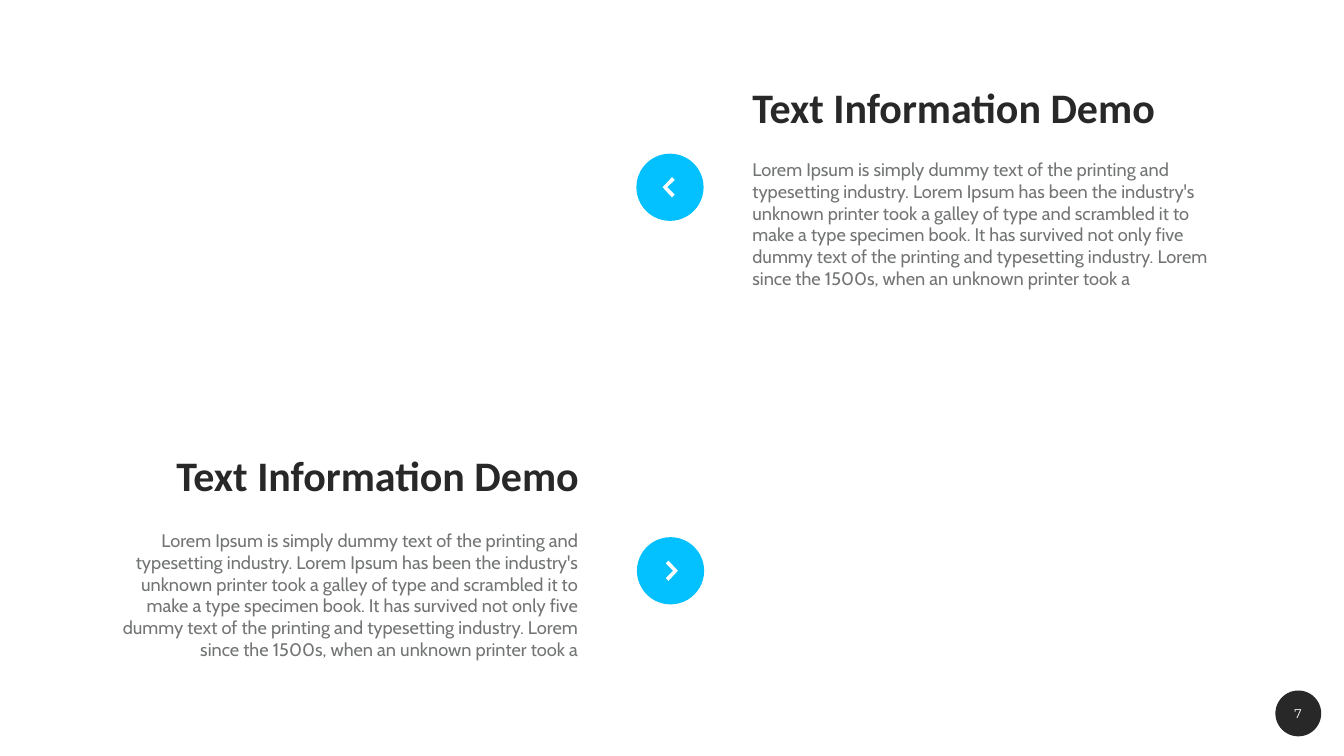
from dataclasses import dataclass
from pptx import Presentation
from pptx.dml.color import RGBColor as Rgb
from pptx.enum.shapes import MSO_SHAPE as Preset
from pptx.enum.text import MSO_AUTO_SIZE as Fit, PP_ALIGN as Align
from pptx.util import Inches, Pt

TITLE = "Text Information Demo"
BODY = (
    "Lorem Ipsum is simply dummy text of the printing and typesetting industry. "
    "Lorem Ipsum has been the industry's unknown printer took a galley of type and "
    "scrambled it to make a type specimen book. It has survived not only five dummy "
    "text of the printing and typesetting industry. Lorem since the 1500s, when an "
    "unknown printer took a"
)
PAGE_NUMBER = "7"

SECTIONS = [
    dict(title=TITLE, body=BODY, align=Align.LEFT, direction=-1,
         title_area=(55.83, 11.33, 41.88, 8.87),
         body_area=(55.83, 20.67, 34.42, 24.53),
         button_center=(49.85, 24.77)),
    dict(title=TITLE, body=BODY, align=Align.RIGHT, direction=1,
         title_area=(9.52, 59.93, 33.71, 11.6),
         body_area=(8.77, 69.73, 34.42, 23.33),
         button_center=(49.89, 75.5)),
]
BADGE_CENTER = (96.6, 94.37)
NUMBER_AREA = (95.35, 93.07, 2.47, 2.6)
BUTTON_SIZE, BADGE_SIZE = 5, 3.41
CHEVRON_SHIFT = 0.02
CHEVRON = [(-0.05, -0.15), (-0.09, -0.11), (0.02, 0),
           (-0.09, 0.11), (-0.05, 0.15), (0.09, 0)]


@dataclass(frozen=True)
class TextStyle:
    font: str
    size: float
    color: str
    bold: bool = False
    line_spacing: float = 1.0
    tracking: float = 0


@dataclass(frozen=True)
class Theme:
    accent: str = "03C0FE"
    dark: str = "282828"
    light: str = "FFFFFF"
    title: TextStyle = TextStyle("Calibri", 60, "282828", True, 0.9)
    body: TextStyle = TextStyle("Cabin", 26, "727574")
    number: TextStyle = TextStyle("Montserrat", 18, "FFFFFF", tracking=3.6)


theme = Theme()
deck = Presentation()
deck.slide_width, deck.slide_height = Inches(26.67), Inches(15)
slide = deck.slides.add_slide(deck.slide_layouts[6])
COLUMN, ROW = deck.slide_width / 100, deck.slide_height / 100


def place(column, row):
    return round(column * COLUMN), round(row * ROW)


def paint(shape, color):
    shape.shadow.inherit = False
    shape.fill.solid()
    shape.fill.fore_color.rgb = Rgb.from_string(color)
    shape.line.fill.background()


def add_disc(center, size, color):
    x, y = place(*center)
    diameter = round(size * COLUMN)
    disc = slide.shapes.add_shape(
        Preset.OVAL, x - diameter // 2, y - diameter // 2, diameter, diameter)
    paint(disc, color)


def add_text(text, area, style, align, fit=Fit.NONE):
    frame = slide.shapes.add_textbox(*place(*area[:2]), *place(*area[2:])).text_frame
    frame.word_wrap = True
    frame.auto_size = fit
    frame.margin_left = frame.margin_right = Inches(0.04)
    frame.margin_top = frame.margin_bottom = Inches(0.04)
    frame.text = text
    paragraph = frame.paragraphs[0]
    paragraph.alignment = align
    paragraph.line_spacing = style.line_spacing
    run = paragraph.runs[0]
    run.font.name = style.font
    run.font.size = Pt(style.size)
    run.font.bold = style.bold
    run.font.color.rgb = Rgb.from_string(style.color)
    if style.tracking:
        run._r.get_or_add_rPr().set("spc", str(round(style.tracking * 100)))


def add_chevron(center, direction):
    x, y = place(*center)
    diameter = BUTTON_SIZE * COLUMN
    corners = [(round(x + direction * (dx + CHEVRON_SHIFT) * diameter),
                round(y + dy * diameter)) for dx, dy in CHEVRON]
    outline = slide.shapes.build_freeform(*corners[0])
    outline.add_line_segments(corners[1:], close=True)
    paint(outline.convert_to_shape(), theme.light)


add_disc(BADGE_CENTER, BADGE_SIZE, theme.dark)
add_text(PAGE_NUMBER, NUMBER_AREA, theme.number, Align.CENTER, Fit.SHAPE_TO_FIT_TEXT)
for section in SECTIONS:
    add_text(section["title"], section["title_area"], theme.title, section["align"])
    add_text(section["body"], section["body_area"], theme.body, section["align"])
for section in SECTIONS:
    add_disc(section["button_center"], BUTTON_SIZE, theme.accent)
    add_chevron(section["button_center"], section["direction"])

deck.save("out.pptx")
